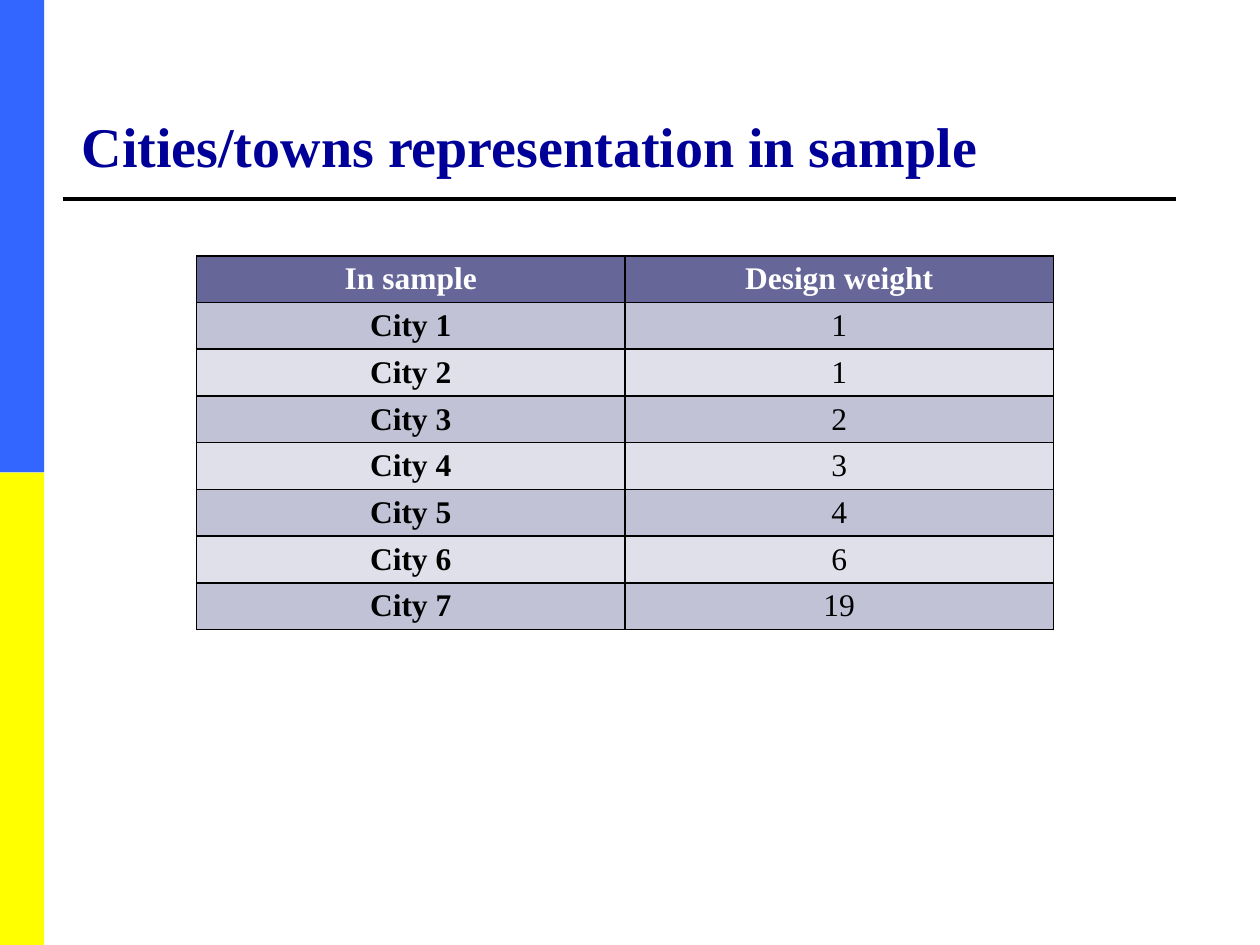
import lxml.etree
import pptx
import pptx.dml.color
import pptx.enum.shapes
import pptx.enum.text
import pptx.oxml
import pptx.oxml.ns
import pptx.util

Inches = pptx.util.Inches
Pt = pptx.util.Pt
RGBColor = pptx.dml.color.RGBColor
qn = pptx.oxml.ns.qn

BLUE = RGBColor(0x33, 0x66, 0xFF)
YELLOW = RGBColor(0xFF, 0xFF, 0x00)
NAVY = RGBColor(0x00, 0x00, 0x99)
BLACK = RGBColor(0x00, 0x00, 0x00)
WHITE = RGBColor(0xFF, 0xFF, 0xFF)
HEADER_FILL = RGBColor(0x66, 0x66, 0x99)
ODD_FILL = RGBColor(0xC2, 0xC2, 0xD6)
EVEN_FILL = RGBColor(0xE0, 0xE0, 0xEB)
FONT = "Times New Roman"


def style_text(paragraph, size, color, bold):
    font = paragraph.runs[0].font
    font.name = FONT
    font.size = Pt(size)
    font.bold = bold
    font.color.rgb = color


def add_borders(cell, color, width):
    properties = cell._tc.get_or_add_tcPr()
    for side in ("a:lnL", "a:lnR", "a:lnT", "a:lnB"):
        border = lxml.etree.SubElement(properties, qn(side), w=str(Pt(width)))
        fill = lxml.etree.SubElement(border, qn("a:solidFill"))
        lxml.etree.SubElement(fill, qn("a:srgbClr"), val=str(color))


presentation = pptx.Presentation()
presentation.slide_width = Inches(10)
presentation.slide_height = Inches(7.5)
slide = presentation.slides.add_slide(presentation.slide_layouts[6])

for top, color in ((0, BLUE), (3.75, YELLOW)):
    side_band = slide.shapes.add_shape(
        pptx.enum.shapes.MSO_SHAPE.RECTANGLE,
        Inches(0), Inches(top), Inches(0.35), Inches(3.75))
    side_band.shadow.inherit = False
    side_band.fill.solid()
    side_band.fill.fore_color.rgb = color
    side_band.line.fill.background()

title_rule = slide.shapes.add_connector(
    pptx.enum.shapes.MSO_CONNECTOR.STRAIGHT,
    Inches(0.5), Inches(1.58), Inches(9.33), Inches(1.58))
title_rule.line.color.rgb = BLACK
title_rule.line.width = Pt(2.25)
lxml.etree.SubElement(title_rule._element.spPr, qn("a:effectLst"))

title = slide.shapes.add_textbox(
    Inches(0.55), Inches(0.23), Inches(8.66), Inches(1.24)).text_frame
title.word_wrap = True
title.vertical_anchor = pptx.enum.text.MSO_ANCHOR.BOTTOM
title.text = "Cities/towns representation in sample"
style_text(title.paragraphs[0], 32, NAVY, True)

design_weights = (1, 1, 2, 3, 4, 6, 19)
rows = [("In sample", "Design weight")]
rows += [(f"City {number}", str(weight))
         for number, weight in enumerate(design_weights, 1)]

weights_table = slide.shapes.add_table(
    len(rows), 2, Inches(1.56), Inches(2.03), Inches(6.8), Inches(2.97)).table

for row_index, row in enumerate(rows):
    is_header = row_index == 0
    row_fill = HEADER_FILL if is_header else ODD_FILL if row_index % 2 else EVEN_FILL
    for column_index, content in enumerate(row):
        cell = weights_table.cell(row_index, column_index)
        cell.margin_left = cell.margin_right = Inches(0.01)
        cell.margin_top = cell.margin_bottom = Inches(0)
        cell.vertical_anchor = pptx.enum.text.MSO_ANCHOR.MIDDLE
        add_borders(cell, BLACK, 1)
        cell.fill.solid()
        cell.fill.fore_color.rgb = row_fill
        cell.text_frame.text = content
        paragraph = cell.text_frame.paragraphs[0]
        paragraph.alignment = pptx.enum.text.PP_ALIGN.CENTER
        style_text(paragraph, 18, WHITE if is_header else BLACK,
                   is_header or column_index == 0)

presentation.save("out.pptx")
